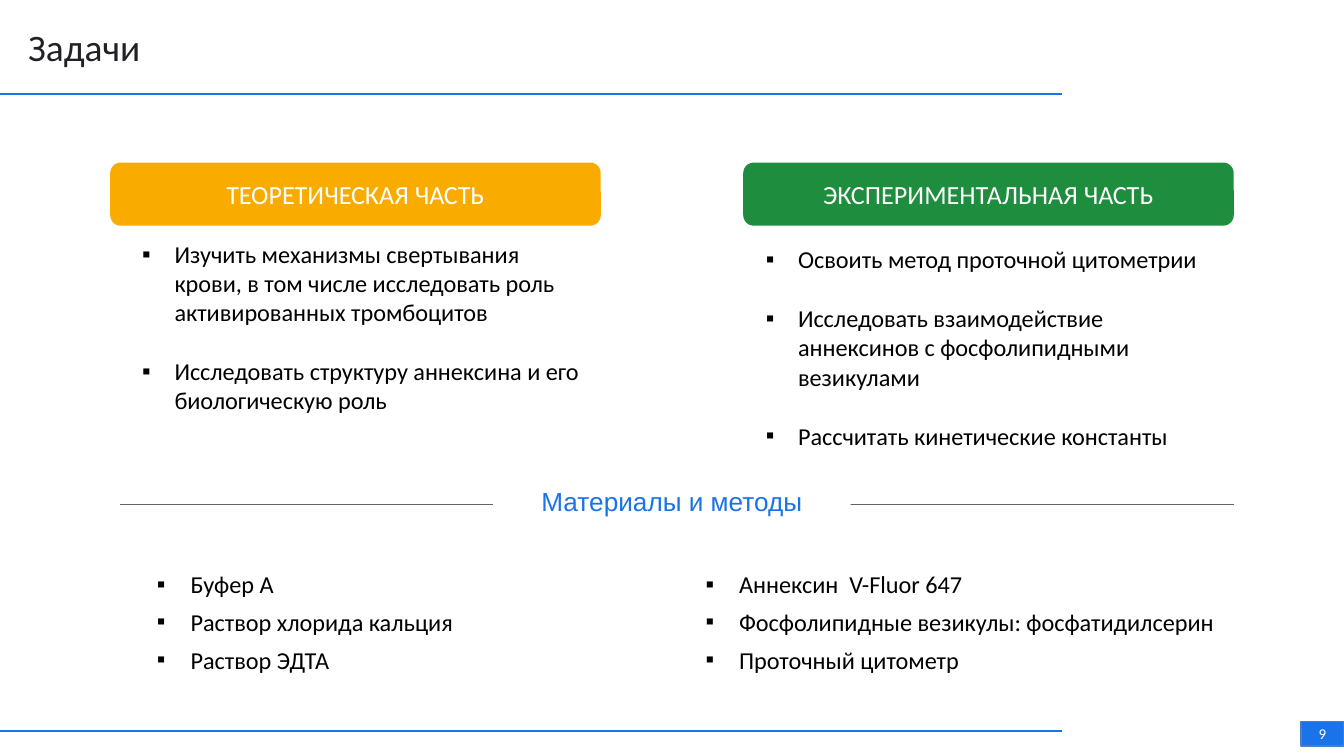
from lxml import etree
from pptx import Presentation
from pptx.dml.color import RGBColor
from pptx.enum.shapes import MSO_CONNECTOR, MSO_SHAPE
from pptx.enum.text import MSO_ANCHOR, MSO_AUTO_SIZE, PP_ALIGN
from pptx.oxml.ns import qn
from pptx.util import Inches, Pt

ROUNDED, RECTANGLE = MSO_SHAPE.ROUNDED_RECTANGLE, MSO_SHAPE.RECTANGLE
STRAIGHT = MSO_CONNECTOR.STRAIGHT
TOP, MIDDLE = MSO_ANCHOR.TOP, MSO_ANCHOR.MIDDLE
LEFT, CENTER = PP_ALIGN.LEFT, PP_ALIGN.CENTER
FIXED_SIZE = MSO_AUTO_SIZE.NONE

BLUE, ORANGE, GREEN = "1A73E8", "F9AB00", "1E8E3E"
WHITE, BLACK, INK, GREY = "FFFFFF", "000000", "202124", "5F6368"
BADGE_EDGE = "4B7EBC"
MARGIN, RIGHT_EDGE, PART_WIDTH = 0.82, 9.18, 3.65
RULE_WIDTH = 7.9


def color(value):
    """Turn a hex string into a colour."""
    return RGBColor.from_string(value)


def place(item, left, top, width, height):
    """Move an item to a box given in inches."""
    item.left, item.top = Inches(left), Inches(top)
    item.width, item.height = Inches(width), Inches(height)


def write(paragraph, text, size, ink, font="Calibri", align=LEFT):
    """Add one formatted run to a paragraph."""
    paragraph.alignment = align
    run = paragraph.add_run()
    run.text = text
    run.font.size, run.font.name = Pt(size), font
    run.font.color.rgb = color(ink)


def add_line(slide, left, right, y, ink, weight):
    """Draw a horizontal line."""
    line = slide.shapes.add_connector(
        STRAIGHT, Inches(left), Inches(y), Inches(right), Inches(y))
    line.line.color.rgb = color(ink)
    line.line.width = Pt(weight)
    etree.SubElement(line._element.spPr, qn("a:effectLst"))


def add_panel(slide, box, kind, fill, text, size, ink=WHITE, font="Calibri", edge=None):
    """Draw a filled shape with centred text."""
    panel = slide.shapes.add_shape(kind, *map(Inches, box))
    panel.shadow.inherit = False
    panel.fill.solid()
    panel.fill.fore_color.rgb = color(fill)
    if edge:
        panel.line.color.rgb = color(edge)
        panel.line.width = Pt(0.75)
    else:
        panel.line.fill.background()
    frame = panel.text_frame
    frame.word_wrap = True
    frame.vertical_anchor = MIDDLE
    write(frame.paragraphs[0], text, size, ink, font, CENTER)


def add_bullets(slide, box, items, indent, hanging, before=0, spacing=1.0):
    """Add a square-bulleted list and return its text frame."""
    frame = slide.shapes.add_textbox(*map(Inches, box)).text_frame
    frame.word_wrap = True
    for index, item in enumerate(items):
        paragraph = frame.add_paragraph() if index else frame.paragraphs[0]
        write(paragraph, item, 13, BLACK)
        paragraph.space_before = Pt(before if index else 0)
        paragraph.line_spacing = spacing
        properties = paragraph._p.get_or_add_pPr()
        properties.set("marL", str(Inches(indent)))
        properties.set("indent", str(-Inches(hanging)))
        etree.SubElement(properties, qn("a:buFont")).set("typeface", "Arial")
        etree.SubElement(properties, qn("a:buChar")).set("char", "▪")
    return frame


def add_header(slide, left, top, width, height):
    """Format the title and underline it."""
    title = slide.shapes.title
    place(title, left, top, width, height)
    frame = title.text_frame
    frame.auto_size = FIXED_SIZE
    frame.vertical_anchor = TOP
    frame.margin_left = frame.margin_right = Inches(0.1)
    frame.margin_top = frame.margin_bottom = Inches(0.1)
    write(frame.paragraphs[0], "Задачи", 20, INK)
    add_line(slide, 0, RULE_WIDTH, top + height, BLUE, 1)


def add_part(slide, left, top, heading, fill, tasks, offset, height, indent):
    """Add a coloured heading with its tasks below."""
    add_panel(slide, (left, top, PART_WIDTH, 0.47), ROUNDED, fill, heading, 14)
    add_bullets(slide, (left, top + offset, PART_WIDTH, height), tasks, indent, 0.24, before=16)


def add_materials(slide, left, top, width):
    """Add the materials divider and its two-column list."""
    add_line(slide, left + 0.07, left + width, top + 0.19, GREY, 0.5)
    label_width = 2.66
    label_left = left + (width - label_width) / 2
    add_panel(slide, (label_left, top, label_width, 0.34), RECTANGLE, WHITE,
              "Материалы и методы", 14, BLUE, "Arial")
    materials = ["Буфер А", "Раствор хлорида кальция", "Раствор ЭДТА",
                 "Аннексин  V-Fluor 647",
                 "Фосфолипидные везикулы: фосфатидилсерин", "Проточный цитометр"]
    frame = add_bullets(slide, (left, top + 0.51, width, 1.11), materials,
                        0.5, 0.25, spacing=1.3)
    frame.margin_top = frame.margin_bottom = Inches(0.1)
    frame._txBody.bodyPr.set("numCol", "2")


def add_footer(slide, top):
    """Add the bottom rule and the page number."""
    add_line(slide, 0, RULE_WIDTH, top + 0.07, BLUE, 1)
    add_panel(slide, (9.68, top, 0.32, 0.18), RECTANGLE, BLUE, "9", 8, edge=BADGE_EDGE)


def main():
    """Build and save the slide."""
    deck = Presentation()
    deck.slide_width = Inches(10)
    deck.slide_height = deck.slide_width * 9 // 16
    slide = deck.slides.add_slide(deck.slide_layouts[5])
    add_header(slide, 0.11, 0.08, 6.62, 0.62)
    add_part(slide, MARGIN, 1.21, "ТЕОРЕТИЧЕСКАЯ ЧАСТЬ", ORANGE, [
        "Изучить механизмы свертывания крови, в том числе исследовать роль "
        "активированных тромбоцитов",
        "Исследовать структуру аннексина и его биологическую роль",
    ], 0.52, 1.41, 0.38)
    add_part(slide, RIGHT_EDGE - PART_WIDTH, 1.21, "ЭКСПЕРИМЕНТАЛЬНАЯ ЧАСТЬ", GREEN, [
        "Освоить метод проточной цитометрии",
        "Исследовать взаимодействие аннексинов с фосфолипидными везикулами",
        "Рассчитать кинетические константы",
    ], 0.56, 1.64, 0.31)
    add_materials(slide, MARGIN, 3.56, RIGHT_EDGE - MARGIN)
    add_footer(slide, 5.37)
    deck.save("out.pptx")


if __name__ == "__main__":
    main()
